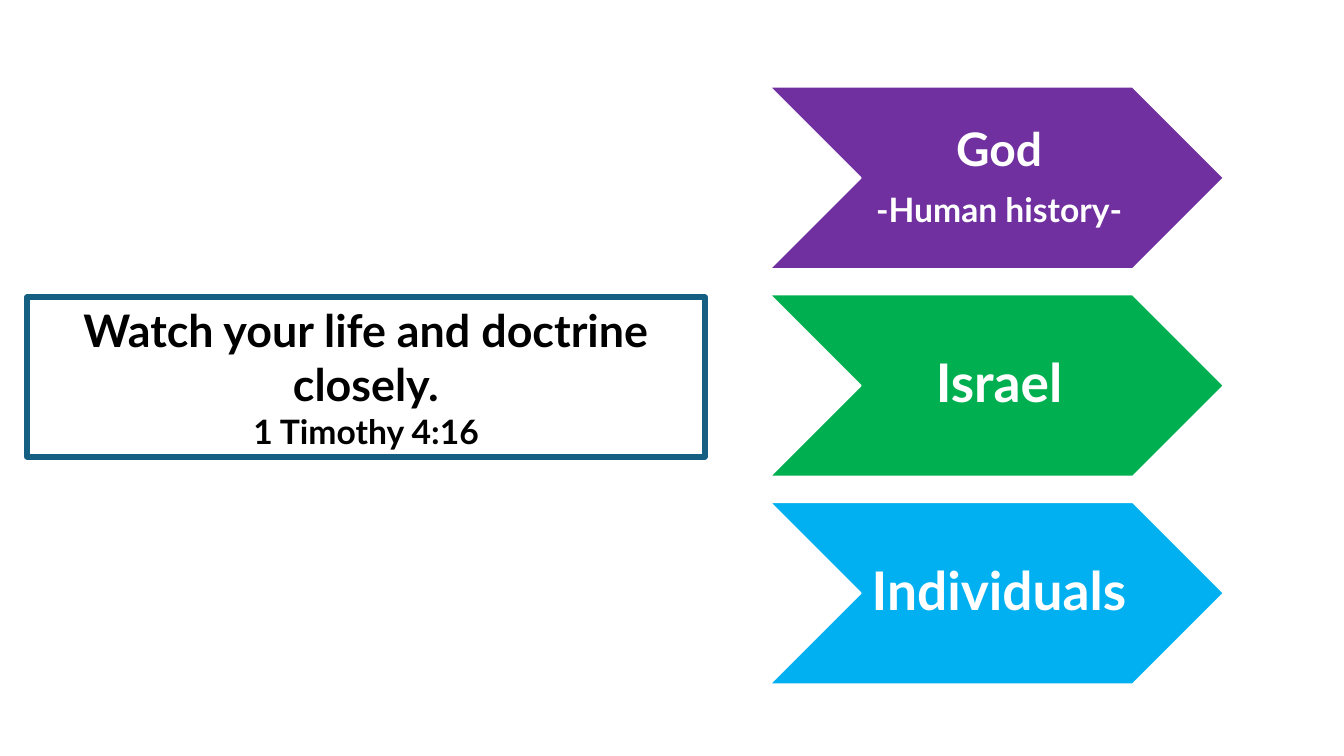
from pptx import Presentation
from pptx.dml.color import RGBColor
from pptx.enum.shapes import MSO_SHAPE
from pptx.enum.text import MSO_ANCHOR, PP_ALIGN
from pptx.util import Inches, Pt

CHEVRON = MSO_SHAPE.CHEVRON
RECTANGLE = MSO_SHAPE.RECTANGLE
MIDDLE = MSO_ANCHOR.MIDDLE
CENTER = PP_ALIGN.CENTER

FONT = "Lato"
COLORS = {
    "purple": "7030A0",
    "green": "00B050",
    "blue": "00B0F0",
    "frame": "156082",
    "white": "FFFFFF",
    "black": "000000",
}

# Fill colour, then (text, size) for each paragraph
CHEVRONS = [
    ("purple", [("God", 33), ("-Human history-", 24)]),
    ("green", [("Israel", 38)]),
    ("blue", [("Individuals", 38)]),
]
VERSE = [("Watch your life and doctrine closely.", 32), ("1 Timothy 4:16", 24)]

CHEVRON_LEFT, CHEVRON_TOP = 7.63, 0.86
CHEVRON_WIDTH, CHEVRON_HEIGHT = 4.51, 1.81
CHEVRON_PITCH = 2.06
VERSE_BOX = (0.27, 2.95, 6.72, 1.58)


def color(name):
    return RGBColor.from_string(COLORS[name])


def add_outlined_shape(slide, kind, box, line_color, line_width):
    shape = slide.shapes.add_shape(kind, *(Inches(length) for length in box))
    shape.shadow.inherit = False
    shape.line.color.rgb = color(line_color)
    shape.line.width = Pt(line_width)
    return shape


def write_centered(text_frame, lines, text_color, line_spacing, gap):
    text_frame.word_wrap = True
    text_frame.vertical_anchor = MIDDLE
    text_frame.text = "\n".join(text for text, size in lines)
    for paragraph, (text, size) in zip(text_frame.paragraphs, lines):
        paragraph.alignment = CENTER
        paragraph.line_spacing = line_spacing
        font = paragraph.runs[0].font
        font.name = FONT
        font.size = Pt(size)
        font.bold = True
        font.color.rgb = color(text_color)
    for paragraph in text_frame.paragraphs[:-1]:
        paragraph.space_after = Pt(gap)


def main():
    presentation = Presentation()
    presentation.slide_width = Inches(13.33)
    presentation.slide_height = Inches(7.5)
    slide = presentation.slides.add_slide(presentation.slide_layouts[6])

    for row, (fill, lines) in enumerate(CHEVRONS):
        top = CHEVRON_TOP + row * CHEVRON_PITCH
        box = (CHEVRON_LEFT, top, CHEVRON_WIDTH, CHEVRON_HEIGHT)
        chevron = add_outlined_shape(slide, CHEVRON, box, "white", 1.5)
        chevron.fill.solid()
        chevron.fill.fore_color.rgb = color(fill)
        text_frame = chevron.text_frame
        text_frame.margin_left = Inches(0.05)
        text_frame.margin_right = 0
        text_frame.margin_top = text_frame.margin_bottom = Inches(0.03)
        write_centered(text_frame, lines, "white", 0.9, 12)

    verse = add_outlined_shape(slide, RECTANGLE, VERSE_BOX, "frame", 4.25)
    verse.fill.background()
    write_centered(verse.text_frame, VERSE, "black", 1.0, 0)

    presentation.save("out.pptx")


if __name__ == "__main__":
    main()
